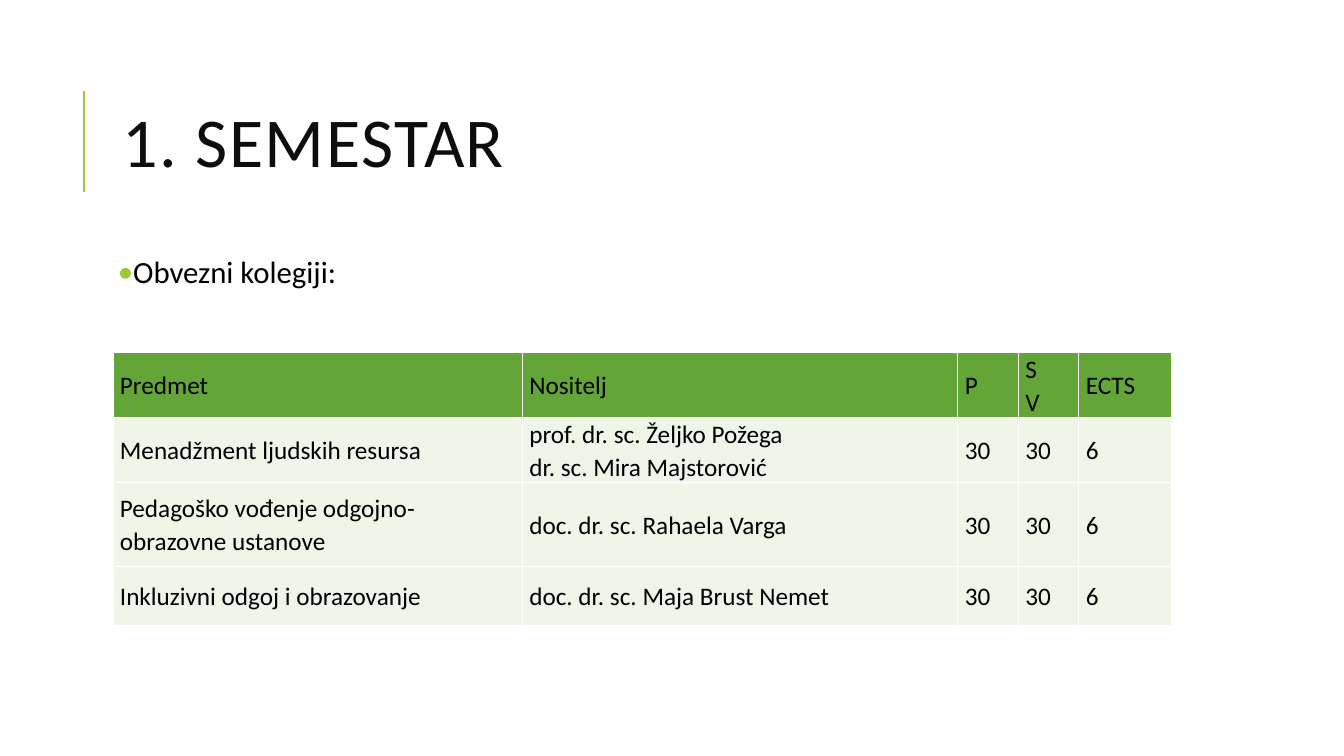
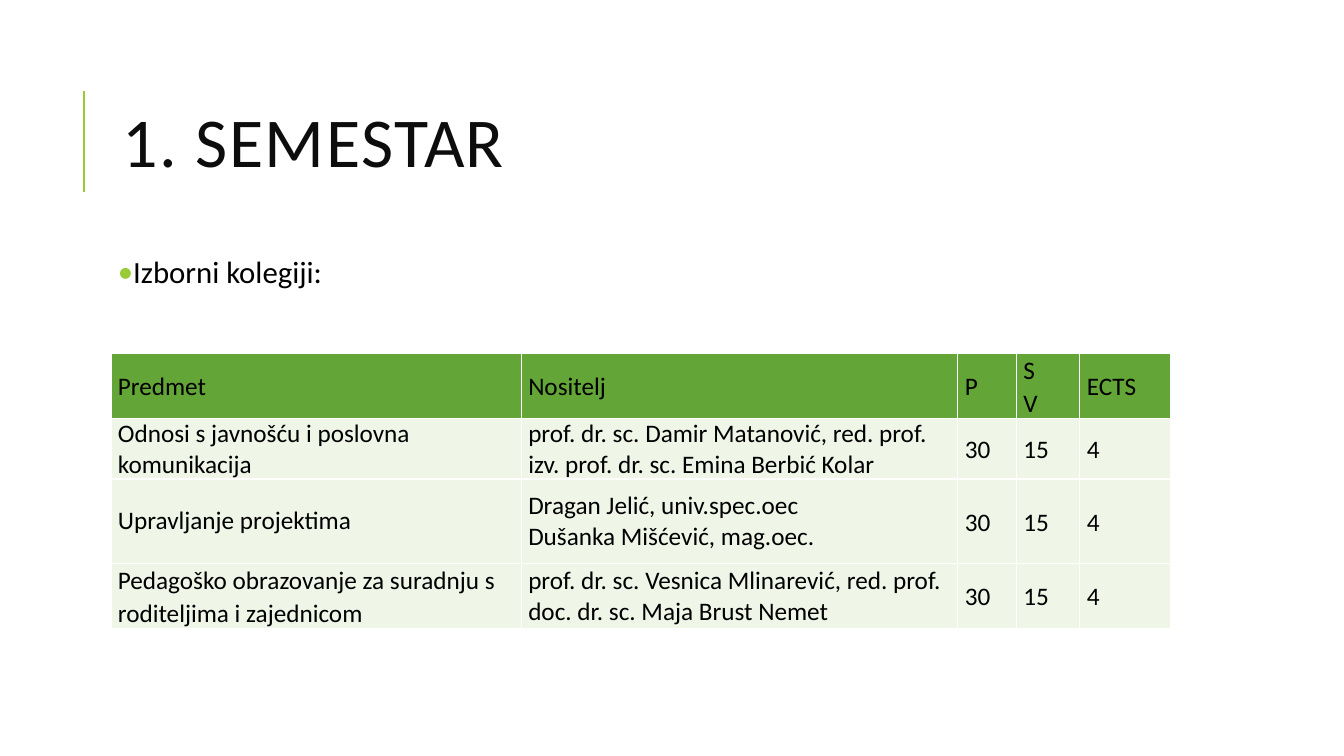
from dataclasses import dataclass

from lxml.etree import SubElement
from pptx import Presentation
from pptx.dml.color import RGBColor
from pptx.enum.shapes import MSO_CONNECTOR
from pptx.enum.text import MSO_ANCHOR
from pptx.oxml.ns import qn
from pptx.slide import Slide
from pptx.table import _Cell
from pptx.text.text import TextFrame
from pptx.util import Inches, Pt

COLORS = {
    "accent": "99CB38",
    "title": "0D0D0D",
    "text": "000000",
    "header": "63A537",
    "row": "EFF6E8",
    "border": "FFFFFF",
}
FONT = "Calibri"
LEFT, WIDTH = 1.12, 10.63
LOOSE, SINGLE = 1.07, 1.0
HEADINGS = ("Predmet", "Nositelj", "P", "S\nV", "ECTS")
ROW_HEIGHTS = (0.58, 0.58, 0.84, 0.58)


@dataclass(frozen=True)
class Course:
    name: str
    lecturers: str
    lectures: int
    seminars: int
    ects: int
    name_spacing: float = LOOSE
    lecturer_spacing: float = LOOSE

    def cells(self) -> list[tuple[str, float]]:
        hours = (self.lectures, self.seminars, self.ects)
        return [(self.name, self.name_spacing),
                (self.lecturers, self.lecturer_spacing),
                *((str(n), LOOSE) for n in hours)]


@dataclass(frozen=True)
class CourseSlide:
    subtitle: str
    left: float
    top: float
    columns: tuple[float, ...]
    courses: tuple[Course, ...]


SLIDES = (
    CourseSlide("Obvezni kolegiji:", 1.12, 3.5, (4.06, 4.32, 0.6, 0.6, 0.92), (
        Course("Menadžment ljudskih resursa",
               "prof. dr. sc. Željko Požega\ndr. sc. Mira Majstorović", 30, 30, 6),
        Course("Pedagoško vođenje odgojno-obrazovne ustanove",
               "doc. dr. sc. Rahaela Varga", 30, 30, 6),
        Course("Inkluzivni odgoj i obrazovanje",
               "doc. dr. sc. Maja Brust Nemet", 30, 30, 6),
    )),
    CourseSlide("Izborni kolegiji:", 1.1, 3.51, (4.07, 4.33, 0.58, 0.63, 0.9), (
        Course("Odnosi s javnošću i poslovna komunikacija",
               "prof. dr. sc. Damir Matanović, red. prof.\n"
               "izv. prof. dr. sc. Emina Berbić Kolar", 30, 15, 4, SINGLE, SINGLE),
        Course("Upravljanje projektima",
               "Dragan Jelić, univ.spec.oec\nDušanka Mišćević, mag.oec.",
               30, 15, 4, SINGLE, SINGLE),
        Course("Pedagoško obrazovanje za suradnju s roditeljima i zajednicom",
               "prof. dr. sc. Vesnica Mlinarević, red. prof.\n"
               "doc. dr. sc. Maja Brust Nemet", 30, 15, 4, LOOSE, SINGLE),
    )),
)


def rgb(name: str) -> RGBColor:
    return RGBColor.from_string(COLORS[name])


def write(tf: TextFrame, text: str, size: float, color: str, spacing: float) -> None:
    tf.text = text
    for p in tf.paragraphs:
        p.line_spacing = spacing
        for r in p.runs:
            for key, value in {"name": FONT, "size": Pt(size), "bold": False}.items():
                setattr(r.font, key, value)
            r.font.color.rgb = rgb(color)


def add_text_frame(s: Slide, top: float, height: float) -> TextFrame:
    box = s.shapes.add_textbox(Inches(LEFT), Inches(top), Inches(WIDTH), Inches(height))
    tf = box.text_frame
    tf.word_wrap = True
    return tf


def add_title(s: Slide, text: str) -> None:
    line = s.shapes.add_connector(MSO_CONNECTOR.STRAIGHT, Inches(0.83), Inches(1.9),
                                  Inches(0.83), Inches(0.9))
    line.line.color.rgb = rgb("accent")
    line.line.width = Pt(1.5)
    SubElement(line._element.spPr, qn("a:effectLst"))
    tf = add_text_frame(s, 0.64, 1.64)
    tf.vertical_anchor = MSO_ANCHOR.MIDDLE
    write(tf, text, 50, "title", 0.8)
    tf.paragraphs[0].runs[0]._r.get_or_add_rPr().set("spc", "100")


def add_subtitle(s: Slide, text: str) -> None:
    tf = add_text_frame(s, 2.5, 4.4)
    for side in ("left", "top", "right", "bottom"):
        setattr(tf, f"margin_{side}", Inches(0.05))
    write(tf, text, 22, "text", 0.9)
    p = tf.paragraphs[0]
    p.space_before, p.space_after = Pt(12), Pt(2)
    pPr = p._p.get_or_add_pPr()
    pPr.set("marL", str(Inches(0.1)))
    pPr.set("indent", str(-Inches(0.1)))
    SubElement(SubElement(pPr, qn("a:buClr")), qn("a:srgbClr"), val=COLORS["accent"])
    SubElement(pPr, qn("a:buFont"), typeface=FONT)
    SubElement(pPr, qn("a:buChar"), char="•")


def fill_cell(cell: _Cell, text: str, spacing: float, fill: str) -> None:
    tcPr = cell._tc.get_or_add_tcPr()
    for side in ("lnL", "lnR", "lnT", "lnB"):
        ln = SubElement(tcPr, qn(f"a:{side}"), w=str(Pt(1)))
        SubElement(SubElement(ln, qn("a:solidFill")), qn("a:srgbClr"), val=COLORS["border"])
    cell.fill.solid()
    cell.fill.fore_color.rgb = rgb(fill)
    layout = {
        "margin_left": Inches(0.07), "margin_right": Inches(0.07),
        "margin_top": 0, "margin_bottom": 0,
        "vertical_anchor": MSO_ANCHOR.MIDDLE,
    }
    for key, value in layout.items():
        setattr(cell, key, value)
    write(cell.text_frame, text, 18, "text", spacing)


def add_course_table(s: Slide, content: CourseSlide) -> None:
    rows = [[(heading, LOOSE) for heading in HEADINGS],
            *(course.cells() for course in content.courses)]
    table = s.shapes.add_table(
        len(rows), len(HEADINGS), Inches(content.left), Inches(content.top),
        Inches(sum(content.columns)), Inches(sum(ROW_HEIGHTS))).table
    table.horz_banding = False
    for column, width in zip(table.columns, content.columns):
        column.width = Inches(width)
    for i, (row, height, values) in enumerate(zip(table.rows, ROW_HEIGHTS, rows)):
        row.height = Inches(height)
        for cell, (text, spacing) in zip(row.cells, values):
            fill_cell(cell, text, spacing, "row" if i else "header")


def main() -> None:
    """Build the two course overview slides."""
    prs = Presentation()
    prs.slide_width, prs.slide_height = Inches(13.33), Inches(7.5)
    for content in SLIDES:
        s = prs.slides.add_slide(prs.slide_layouts[6])
        add_title(s, "1. SEMESTAR")
        add_subtitle(s, content.subtitle)
        add_course_table(s, content)
    prs.save("out.pptx")


if __name__ == "__main__":
    main()
